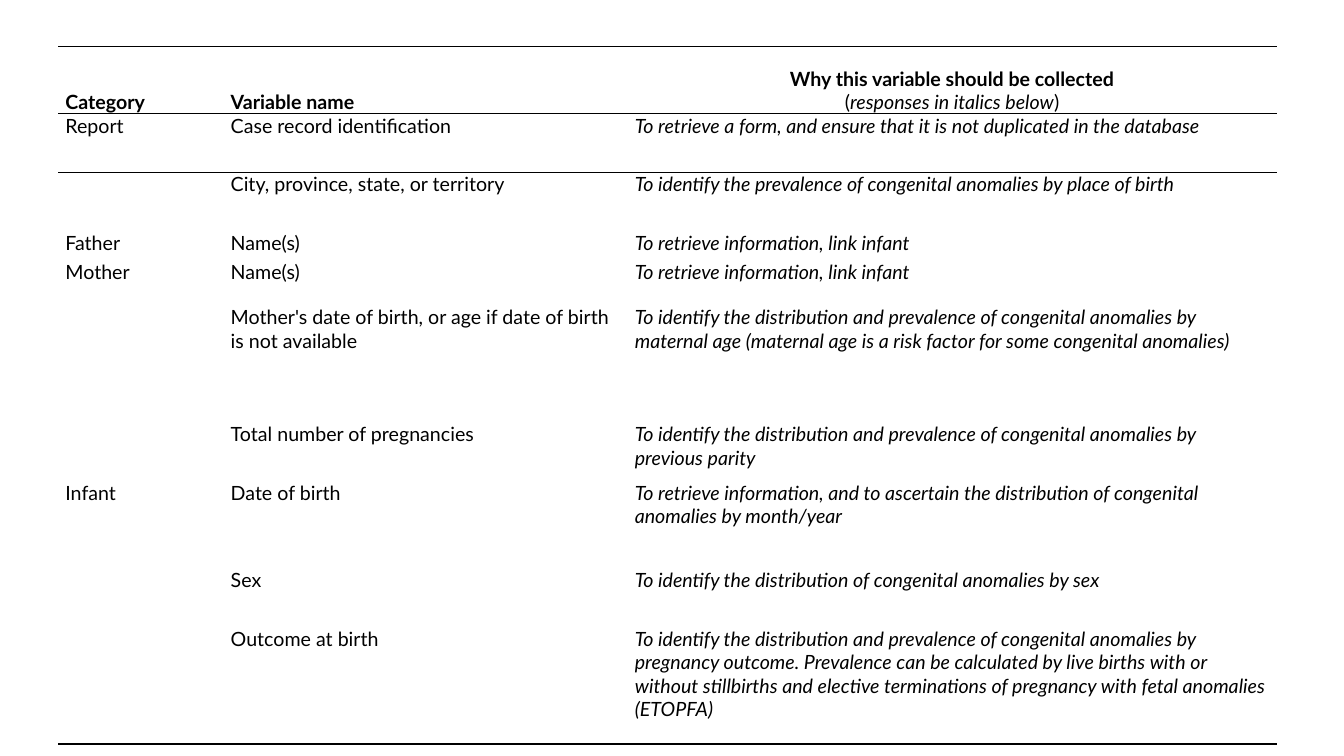
import dataclasses

import pptx
import pptx.dml.color
import pptx.enum.text
import pptx.oxml.ns
import pptx.util
from lxml import etree

Pt = pptx.util.Pt
qn = pptx.oxml.ns.qn


@dataclasses.dataclass(frozen=True)
class Theme:
    font: str = "Lato"
    size: int = 14
    ink: str = "000000"
    rule_width: int = 1
    side_margin: float = 5.2
    plain_table_style: str = "{2D5ABB26-0587-4C30-8999-92F81FD0307C}"


THEME = Theme()

TABLE_LEFT, TABLE_TOP = 41.5, 33.1
COLUMN_WIDTHS = [118.1, 288.7, 463.7]
HEADER_HEIGHT = 48.2

HEADINGS = ["Category", "Variable name"]
REASON_HEADING = "Why this variable should be collected"
REASON_NOTE = "responses in italics below"

VARIABLES = [
    (41.8, "Report", "Case record identification",
     "To retrieve a form, and ensure that it is not duplicated in the database"),
    (41.8, "", "City, province, state, or territory",
     "To identify the prevalence of congenital anomalies by place of birth"),
    (20.9, "Father", "Name(s)", "To retrieve information, link infant"),
    (32.4, "Mother", "Name(s)", "To retrieve information, link infant"),
    (83.6, "", "Mother's date of birth, or age if date of birth is not available",
     "To identify the distribution and prevalence of congenital anomalies by maternal age "
     "(maternal age is a risk factor for some congenital anomalies)"),
    (41.8, "", "Total number of pregnancies",
     "To identify the distribution and prevalence of congenital anomalies by previous parity"),
    (62.6, "Infant", "Date of birth",
     "To retrieve information, and to ascertain the distribution of congenital anomalies "
     "by month/year"),
    (41.8, "", "Sex", "To identify the distribution of congenital anomalies by sex"),
    (83.6, "", "Outcome at birth",
     "To identify the distribution and prevalence of congenital anomalies by pregnancy outcome. "
     "Prevalence can be calculated by live births with or without stillbirths and elective "
     "terminations of pregnancy with fetal anomalies (ETOPFA)"),
]


def format_run(run, bold=False, italic=False):
    run.font.name = THEME.font
    run.font.size = Pt(THEME.size)
    run.font.bold = bold
    run.font.italic = italic
    run.font.color.rgb = pptx.dml.color.RGBColor.from_string(THEME.ink)


def write_cell(cell, text, bold=False, italic=False):
    cell.text_frame.text = text
    for run in cell.text_frame.paragraphs[0].runs:
        format_run(run, bold, italic)


def write_reason_heading(cell):
    paragraph = cell.text_frame.paragraphs[0]
    paragraph.text = f"{REASON_HEADING}\v("
    paragraph.alignment = pptx.enum.text.PP_ALIGN.CENTER
    for text in (REASON_NOTE, ")"):
        paragraph.add_run().text = text
    for run in paragraph.runs:
        format_run(run, run.text == REASON_HEADING, run.text == REASON_NOTE)
    line_break = paragraph._p.find(qn("a:br"))
    etree.SubElement(line_break, qn("a:rPr"), sz=str(THEME.size * 100))


def prepare_cell(cell):
    cell.margin_left = cell.margin_right = Pt(THEME.side_margin)
    cell.margin_top = cell.margin_bottom = Pt(0)
    cell.fill.background()


def rule_row(cells, edges):
    for cell in cells:
        properties = cell._tc.get_or_add_tcPr()
        for position, edge in enumerate(edges):
            line = etree.Element(qn(f"a:ln{edge}"), w=str(Pt(THEME.rule_width)))
            fill = etree.SubElement(line, qn("a:solidFill"))
            etree.SubElement(fill, qn("a:srgbClr"), val=THEME.ink)
            properties.insert(position, line)


def add_plain_table(slide, row_heights):
    frame = slide.shapes.add_table(
        len(row_heights), len(COLUMN_WIDTHS), Pt(TABLE_LEFT), Pt(TABLE_TOP),
        Pt(sum(COLUMN_WIDTHS)), Pt(sum(row_heights)))
    table = frame.table
    table.horz_banding = False
    table._tbl.tblPr.find(qn("a:tableStyleId")).text = THEME.plain_table_style
    for column, width in zip(table.columns, COLUMN_WIDTHS):
        column.width = Pt(width)
    for row, height in zip(table.rows, row_heights):
        row.height = Pt(height)
    for cell in table.iter_cells():
        prepare_cell(cell)
    return table


def fill_header(cells):
    for cell in cells:
        cell.vertical_anchor = pptx.enum.text.MSO_ANCHOR.BOTTOM
    for cell, heading in zip(cells, HEADINGS):
        write_cell(cell, heading, bold=True)
    write_reason_heading(cells[-1])


def fill_variable(cells, category, name, reason):
    if category:
        write_cell(cells[0], category)
    write_cell(cells[1], name)
    write_cell(cells[2], reason, italic=True)


def main():
    presentation = pptx.Presentation()
    presentation.slide_width = Pt(960)
    presentation.slide_height = Pt(540)
    slide = presentation.slides.add_slide(presentation.slide_layouts[6])

    heights = [HEADER_HEIGHT] + [variable[0] for variable in VARIABLES]
    table = add_plain_table(slide, heights)
    rows = [list(row.cells) for row in table.rows]
    fill_header(rows[0])
    for cells, variable in zip(rows[1:], VARIABLES):
        fill_variable(cells, *variable[1:])

    rule_row(rows[0], "TB")
    rule_row(rows[1], "T")
    rule_row(rows[-1], "B")
    presentation.save("out.pptx")


if __name__ == "__main__":
    main()
